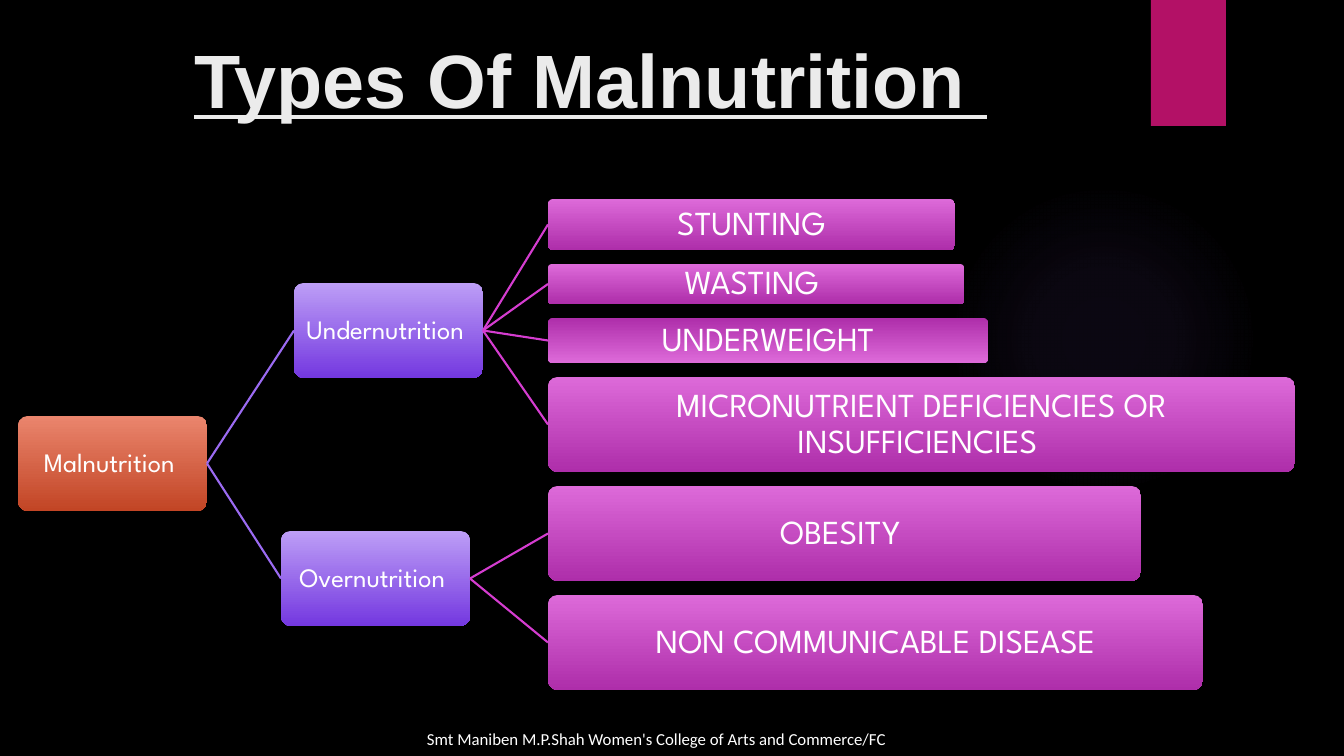
from dataclasses import dataclass

from lxml.etree import SubElement
from pptx import Presentation
from pptx.dml.color import RGBColor
from pptx.enum.shapes import MSO_CONNECTOR, MSO_SHAPE
from pptx.enum.text import MSO_ANCHOR, PP_ALIGN
from pptx.oxml import parse_xml
from pptx.oxml.ns import nsdecls, qn
from pptx.shapes.autoshape import Shape
from pptx.slide import Slide
from pptx.text.text import Font
from pptx.util import Emu, Pt

SLIDE_W, SLIDE_H = 1344, 756
EMU_PER_PX = 12192000 / SLIDE_W

BLACK = RGBColor(0x00, 0x00, 0x00)
WHITE = RGBColor(0xFF, 0xFF, 0xFF)
TITLE_GREY = RGBColor(0xEB, 0xEB, 0xEB)
RIBBON_PINK = RGBColor(0xB3, 0x11, 0x66)
VIOLET = RGBColor(0x9B, 0x6B, 0xF2)
MAGENTA = RGBColor(0xD5, 0x3D, 0xD0)
ORANGE_FADE = (RGBColor(0xEA, 0x85, 0x6D), RGBColor(0xC2, 0x45, 0x25))
VIOLET_FADE = (RGBColor(0xBD, 0x9E, 0xF6), RGBColor(0x74, 0x38, 0xE0))
MAGENTA_FADE = (RGBColor(0xDD, 0x6A, 0xD9), RGBColor(0xAE, 0x2E, 0xAA))

NODE_W, NODE_H = 189, 95
FORM_LEFT, FORM_TOP, FORM_GAP = 548, 199, 14
LEFT_SITE, RIGHT_SITE = 1, 3


@dataclass(frozen=True)
class Node:
    """A box of the tree."""
    label: str
    left: int
    top: int
    fade: tuple[RGBColor, RGBColor]
    width: int = NODE_W
    height: int = NODE_H
    size: int = 19


@dataclass(frozen=True)
class Form:
    """A form of malnutrition in the right-hand stack."""
    label: str
    width: int
    height: int = NODE_H
    fade: tuple[RGBColor, RGBColor] = MAGENTA_FADE


@dataclass(frozen=True)
class Branch:
    node: Node
    forms: tuple[Form, ...]


ROOT = Node("Malnutrition ", 18, 416, ORANGE_FADE)
BRANCHES = (
    Branch(Node("Undernutrition ", 294, 283, VIOLET_FADE), (
        Form("STUNTING", 407, 51),
        Form("WASTING ", 416, 40),
        Form("UNDERWEIGHT", 440, 45, MAGENTA_FADE[::-1]),
        Form("MICRONUTRIENT DEFICIENCIES OR INSUFFICIENCIES ", 747),
    )),
    Branch(Node("Overnutrition ", 281, 531, VIOLET_FADE), (
        Form("OBESITY ", 593),
        Form("NON COMMUNICABLE DISEASE", 655),
    )),
)


def px(length: int) -> Emu:
    return Emu(round(length * EMU_PER_PX))


def style_font(font: Font, name: str, size: int, color: RGBColor) -> None:
    font.name = name
    font.size = Pt(size)
    font.color.rgb = color


def add_plain(slide: Slide, kind: MSO_SHAPE, left: int, top: int,
              width: int, height: int) -> Shape:
    shape = slide.shapes.add_shape(kind, px(left), px(top), px(width), px(height))
    shape.shadow.inherit = False
    shape.line.fill.background()
    return shape


def add_glow(slide: Slide) -> None:
    glow = add_plain(slide, MSO_SHAPE.OVAL, 949, 184, 310, 310)
    stops = "".join(
        f'<a:gs pos="{pos * 1000}"><a:srgbClr val="{VIOLET}">'
        f'<a:alpha val="{alpha * 1000}"/></a:srgbClr></a:gs>'
        for pos, alpha in ((0, 7), (36, 6), (69, 0), (100, 0)))
    fade = parse_xml(
        f'<a:gradFill {nsdecls("a")}><a:gsLst>{stops}</a:gsLst><a:path path="circle">'
        '<a:fillToRect l="50000" t="50000" r="50000" b="50000"/></a:path></a:gradFill>')
    glow.element.spPr.find(qn("a:prstGeom")).addnext(fade)


def add_node(slide: Slide, node: Node) -> Shape:
    box = add_plain(slide, MSO_SHAPE.ROUNDED_RECTANGLE,
                    node.left, node.top, node.width, node.height)
    box.adjustments[0] = 0.1
    box.fill.gradient()
    box.fill.gradient_angle = 270
    for stop, position, color in zip(box.fill.gradient_stops, (0, 1), node.fade):
        stop.position = position
        stop.color.rgb = color

    frame = box.text_frame
    frame.word_wrap = True
    frame.vertical_anchor = MSO_ANCHOR.MIDDLE
    frame.margin_left = frame.margin_right = px(2)
    frame.margin_top = frame.margin_bottom = px(2)
    frame.text = node.label
    label = frame.paragraphs[0]
    label.alignment = PP_ALIGN.CENTER
    label.line_spacing = 0.9
    style_font(label.runs[0].font, "League Spartan", node.size, WHITE)
    return box


def add_link(slide: Slide, parent: Shape, child: Shape, color: RGBColor) -> None:
    link = slide.shapes.add_connector(MSO_CONNECTOR.STRAIGHT, 0, 0, 0, 0)
    link.begin_connect(parent, RIGHT_SITE)
    link.end_connect(child, LEFT_SITE)
    link.line.color.rgb = color
    link.line.width = Pt(1.5)
    SubElement(link.element.spPr, qn("a:effectLst"))


def add_caption(slide: Slide, text: str, left: int, top: int, width: int,
                height: int, name: str, size: int, color: RGBColor,
                align: PP_ALIGN) -> Font:
    frame = slide.shapes.add_textbox(px(left), px(top), px(width), px(height)).text_frame
    frame.word_wrap = True
    frame.text = text
    frame.paragraphs[0].alignment = align
    font = frame.paragraphs[0].runs[0].font
    style_font(font, name, size, color)
    return font


def add_tree(slide: Slide) -> None:
    root = add_node(slide, ROOT)
    top = FORM_TOP
    for branch in BRANCHES:
        parent = add_node(slide, branch.node)
        add_link(slide, root, parent, VIOLET)
        for form in branch.forms:
            child = add_node(slide, Node(form.label, FORM_LEFT, top, form.fade,
                                         form.width, form.height, 24))
            add_link(slide, parent, child, MAGENTA)
            top += form.height + FORM_GAP


def main() -> None:
    deck = Presentation()
    deck.slide_width, deck.slide_height = px(SLIDE_W), px(SLIDE_H)
    slide = deck.slides.add_slide(deck.slide_layouts[6])
    slide.background.fill.solid()
    slide.background.fill.fore_color.rgb = BLACK

    # Backdrop
    add_glow(slide)
    ribbon = add_plain(slide, MSO_SHAPE.RECTANGLE, 1151, 0, 75, 126)
    ribbon.fill.solid()
    ribbon.fill.fore_color.rgb = RIBBON_PINK

    # Title
    title_font = add_caption(slide, "Types Of Malnutrition ", 72, 28, 1037, 97,
                             "Arial", 54, TITLE_GREY, PP_ALIGN.CENTER)
    title_font.bold = True
    title_font.underline = True

    # Tree of types
    add_tree(slide)

    # Footer
    add_caption(slide, "Smt Maniben M.P.Shah Women's College of Arts and Commerce/FC",
                417, 724, 515, 30, "Calibri", 12, WHITE, PP_ALIGN.LEFT)

    deck.save("out.pptx")


if __name__ == "__main__":
    main()
